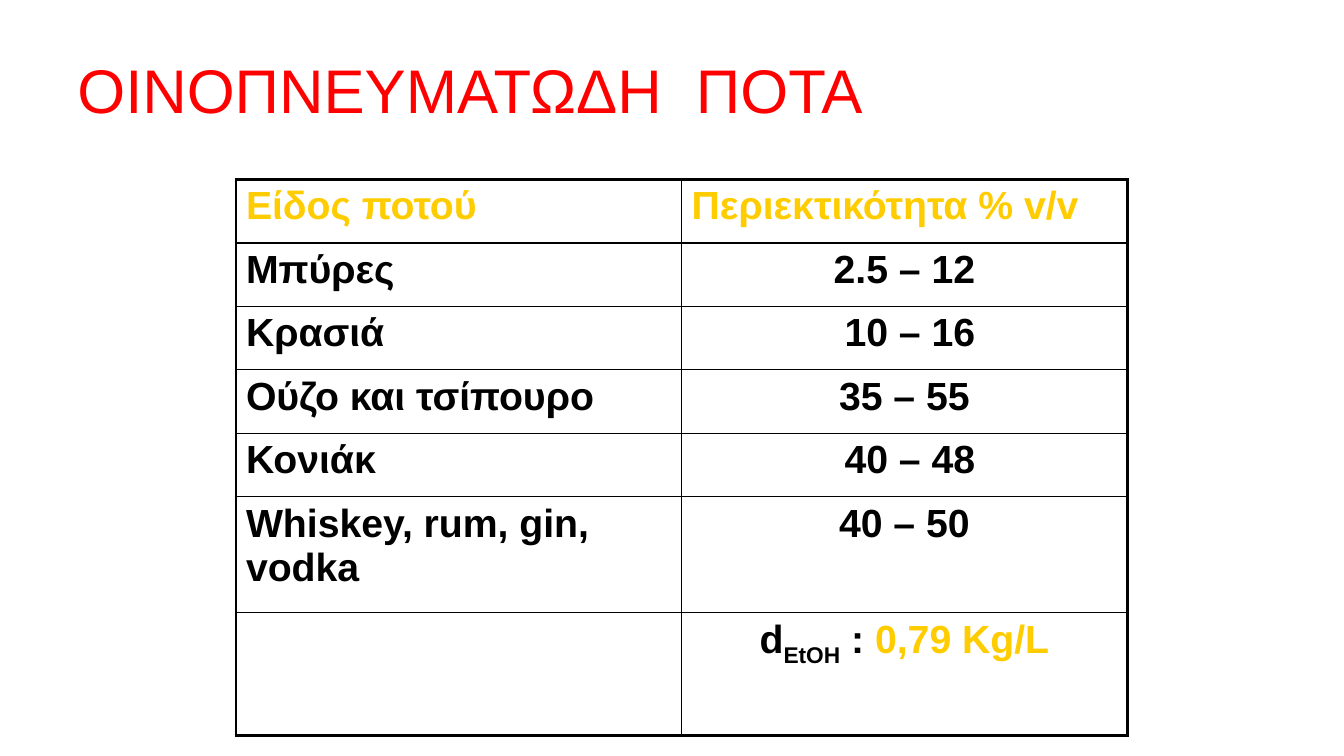
from lxml.etree import SubElement
from pptx import Presentation
from pptx.dml.color import RGBColor
from pptx.enum.text import MSO_ANCHOR, PP_ALIGN
from pptx.oxml.ns import qn
from pptx.util import Inches, Pt

RED = RGBColor(0xFF, 0x00, 0x00)
GOLD = RGBColor(0xFF, 0xCC, 0x00)
BLACK = RGBColor(0x00, 0x00, 0x00)

DRINKS = [
    ("Είδος ποτού", "Περιεκτικότητα % v/v"),
    ("Μπύρες", "2.5 – 12"),
    ("Κρασιά", " 10 – 16"),
    ("Ούζο και τσίπουρο", " 35 – 55 "),
    ("Κονιάκ", " 40 – 48"),
    ("Whiskey, rum, gin, vodka", " 40 – 50 "),
    ("", ""),
]
ROW_HEIGHTS = [0.63] * 5 + [1.15, 1.22]
COL_WIDTH = 4.42


def set_font(font, size, color, bold=False):
    """Apply the slide's typeface with a size, colour and weight."""
    font.name = "Arial"
    font.size = Pt(size)
    font.bold = bold
    font.color.rgb = color


def add_title(s, text):
    """Add the slide heading."""
    tf = s.shapes.add_textbox(Inches(0.67), Inches(0.3), Inches(12), Inches(1.25)).text_frame
    tf.word_wrap = True
    tf.vertical_anchor = MSO_ANCHOR.MIDDLE
    p = tf.paragraphs[0]
    p.text = text
    p.line_spacing = 0.9
    set_font(p.font, 44, RED)


def set_borders(cell, widths):
    """Draw black cell borders from a mapping of side to points."""
    tcPr = cell._tc.get_or_add_tcPr()
    for side in "LRTB":
        ln = SubElement(tcPr, qn(f"a:ln{side}"), w=str(Pt(widths[side])))
        fill = SubElement(ln, qn("a:solidFill"))
        SubElement(fill, qn("a:srgbClr"), val=str(BLACK))


def add_drinks_table(s):
    """Add the table of drinks with a heavy outline and thin inner lines."""
    rows, cols = len(DRINKS), len(DRINKS[0])
    table = s.shapes.add_table(
        rows, cols, Inches(2.34), Inches(1.78),
        Inches(COL_WIDTH * cols), Inches(sum(ROW_HEIGHTS)),
    ).table
    table.first_row = table.horz_banding = False
    for col in table.columns:
        col.width = Inches(COL_WIDTH)
    for i, (texts, height) in enumerate(zip(DRINKS, ROW_HEIGHTS)):
        table.rows[i].height = Inches(height)
        for j, text in enumerate(texts):
            cell = table.cell(i, j)
            outer = {"L": j == 0, "R": j == cols - 1, "T": i == 0, "B": i == rows - 1}
            set_borders(cell, {side: 2.25 if edge else 1 for side, edge in outer.items()})
            cell.fill.background()
            p = cell.text_frame.paragraphs[0]
            p.text = text
            set_font(p.font, 28, BLACK if i else GOLD, True)
            if i and j:
                p.alignment = PP_ALIGN.CENTER
    return table


def add_density(cell):
    """Write the ethanol density with its subscript and coloured value."""
    p = cell.text_frame.paragraphs[0]
    for text, color, baseline in [
        ("d", BLACK, 0), ("EtOH", BLACK, -25000), (" :", BLACK, 0), (" 0,79 Kg/L", GOLD, 0),
    ]:
        r = p.add_run()
        r.text = text
        set_font(r.font, 28, color, True)
        if baseline:
            r.font._element.set("baseline", str(baseline))


def main():
    """Build and save the slide."""
    prs = Presentation()
    prs.slide_width, prs.slide_height = Inches(13.33), Inches(7.5)
    s = prs.slides.add_slide(prs.slide_layouts[6])
    add_title(s, "ΟΙΝΟΠΝΕΥΜΑΤΩΔΗ  ΠΟΤΑ")
    table = add_drinks_table(s)
    add_density(table.cell(len(DRINKS) - 1, 1))
    prs.save("out.pptx")


if __name__ == "__main__":
    main()
